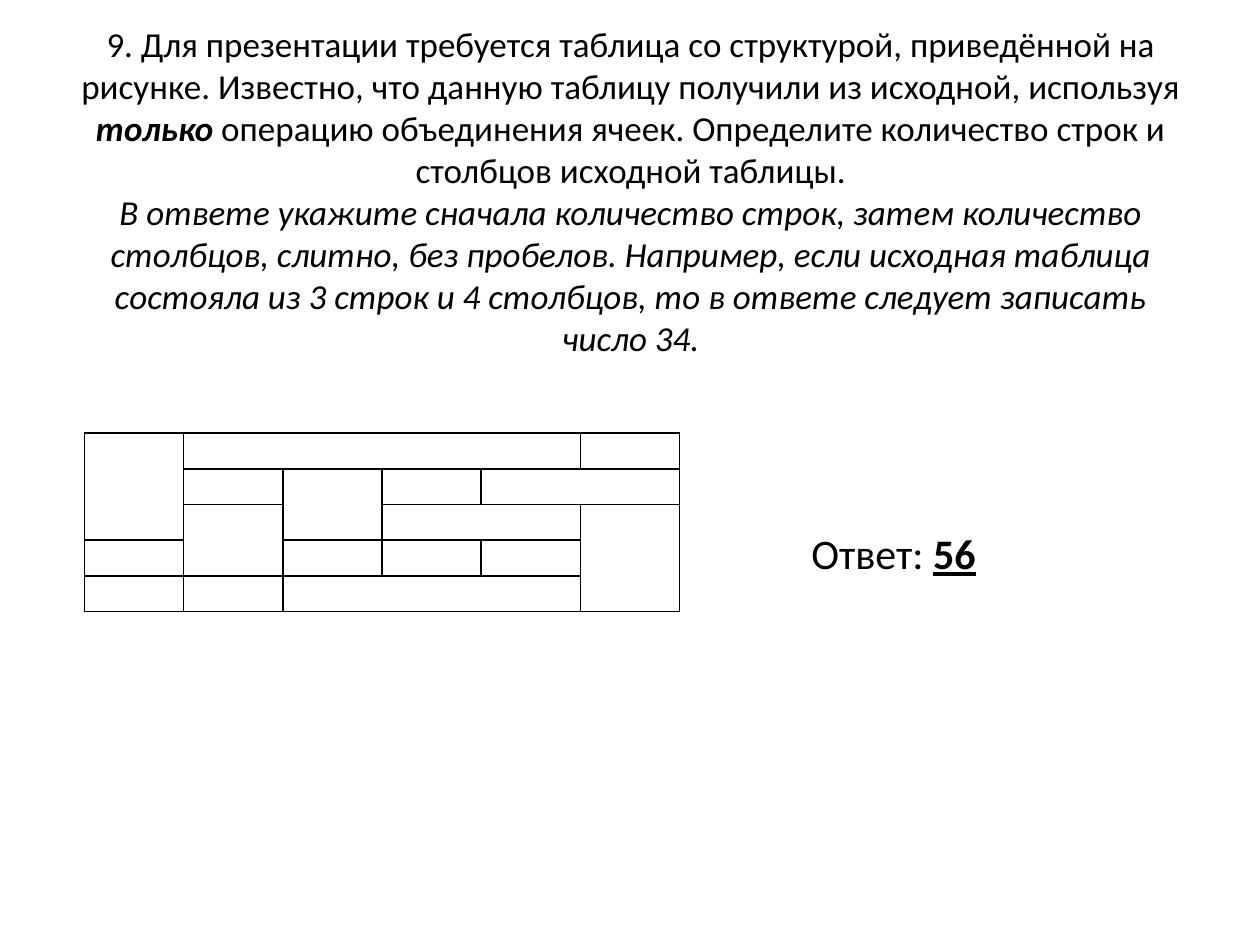
from dataclasses import dataclass
from itertools import product
from lxml.etree import SubElement
from pptx import Presentation
from pptx.dml.color import RGBColor
from pptx.enum.text import MSO_ANCHOR, MSO_AUTO_SIZE, PP_ALIGN
from pptx.oxml import parse_xml
from pptx.oxml.ns import nsdecls, qn
from pptx.util import Pt


@dataclass(frozen=True)
class Theme:
    font: str = "Calibri"
    ink: str = "000000"
    head: int = 20
    body: int = 24
    cell: int = 10
    line: int = 1


class Deck:
    def __init__(self, theme, wide, high):
        self.theme = theme
        self.file = Presentation()
        self.file.slide_width, self.file.slide_height = Pt(wide), Pt(high)
        self.slide = self.file.slides.add_slide(self.file.slide_layouts[5])

    def fill(self, para, parts, size):
        for text, marks in parts:
            run = para.add_run()
            run.text = text
            font = run.font
            font.name, font.size = self.theme.font, Pt(size)
            font.color.rgb = RGBColor.from_string(self.theme.ink)
            font.bold, font.italic = "b" in marks, "i" in marks
            font.underline = "u" in marks

    def title(self, box, paras):
        shape = self.slide.shapes.title
        shape.left, shape.top, shape.width, shape.height = map(Pt, box)
        frame = shape.text_frame
        frame.word_wrap, frame.auto_size = True, MSO_AUTO_SIZE.NONE
        frame.vertical_anchor = MSO_ANCHOR.MIDDLE
        frame.margin_top = Pt(10.8)
        for i, parts in enumerate(paras):
            para = frame.add_paragraph() if i else frame.paragraphs[0]
            para.alignment = PP_ALIGN.CENTER
            self.fill(para, parts, self.theme.head)

    def label(self, box, parts):
        frame = self.slide.shapes.add_textbox(*map(Pt, box)).text_frame
        frame.word_wrap = False
        frame.auto_size = MSO_AUTO_SIZE.SHAPE_TO_FIT_TEXT
        self.fill(frame.paragraphs[0], parts, self.theme.body)

    def edge(self, cell):
        props = cell._tc.get_or_add_tcPr()
        for i, side in enumerate(("lnL", "lnR", "lnT", "lnB")):
            props.insert(i, parse_xml(
                f'<a:{side} {nsdecls("a")} w="{Pt(self.theme.line)}"><a:solidFill>'
                f'<a:srgbClr val="{self.theme.ink}"/></a:solidFill></a:{side}>'))

    def grid(self, box, rows, cols, spans):
        table = self.slide.shapes.add_table(rows, cols, *map(Pt, box)).table
        table.first_row = table.horz_banding = False
        for row in table.rows:
            row.height = Pt(box[3] / rows)
        for col in table.columns:
            col.width = Pt(box[2] / cols)
        for r, c in product(range(rows), range(cols)):
            cell = table.cell(r, c)
            cell.margin_top = cell.margin_bottom = 0
            cell.fill.background()
            self.edge(cell)
            end = SubElement(cell.text_frame.paragraphs[0]._p, qn("a:endParaRPr"))
            end.set("sz", str(self.theme.cell * 100))
        for r, c, down, across in spans:
            table.cell(r, c).merge(table.cell(r + down - 1, c + across - 1))


def main():
    deck = Deck(Theme(), 720, 540)
    deck.title((36.5, 60.5, 648, 90), [
        [("9. Для презентации требуется таблица со структурой, приведённой на рисунке. "
          "Известно, что данную таблицу получили из исходной, используя ", ""),
         ("только ", "bi"),
         ("операцию объединения ячеек. Определите количество строк и столбцов "
          "исходной таблицы.", "")],
        [("В ответе укажите сначала количество строк, затем количество столбцов, "
          "слитно, без пробелов. Например, если исходная таблица состояла из 3 строк "
          "и 4 столбцов, то в ответе следует записать число 34.", "i")],
    ])
    deck.grid((48.2, 247.5, 340.2, 102), 5, 6, [
        (0, 0, 3, 1), (0, 1, 1, 4), (1, 2, 2, 1), (1, 4, 1, 2),
        (2, 1, 2, 1), (2, 3, 1, 2), (2, 5, 3, 1), (4, 2, 1, 3),
    ])
    deck.label((456.5, 298, 109.5, 36), [("Ответ: ", ""), ("56", "bu")])
    deck.file.save("out.pptx")


if __name__ == "__main__":
    main()
